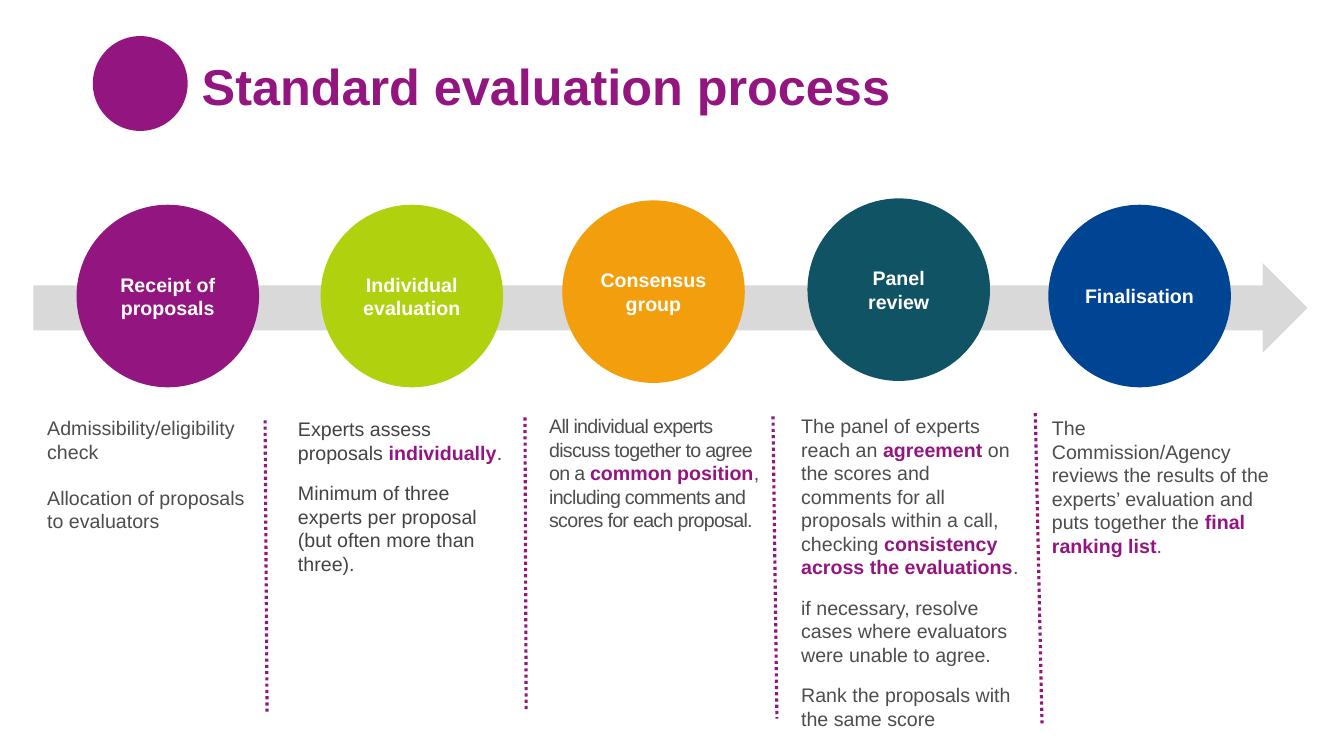
from dataclasses import dataclass

from lxml.etree import SubElement
from pptx import Presentation
from pptx.dml.color import RGBColor
from pptx.enum.dml import MSO_LINE
from pptx.enum.shapes import MSO_CONNECTOR, MSO_SHAPE
from pptx.enum.text import MSO_ANCHOR, PP_ALIGN
from pptx.oxml.ns import qn
from pptx.shapes.autoshape import Shape
from pptx.slide import Slide
from pptx.text.text import _Paragraph as Paragraph
from pptx.util import Cm, Pt

FONT = "Arial"
PURPLE = RGBColor(0x93, 0x16, 0x80)
LIME = RGBColor(0xB0, 0xD1, 0x0E)
ORANGE = RGBColor(0xF3, 0x9E, 0x0C)
TEAL = RGBColor(0x0F, 0x53, 0x64)
BLUE = RGBColor(0x00, 0x44, 0x94)
LIGHT_GREY = RGBColor(0xD9, 0xD9, 0xD9)
TEXT_GREY = RGBColor(0x4D, 0x4D, 0x4D)
DARK_GREY = RGBColor(0x44, 0x43, 0x42)
WHITE = RGBColor(0xFF, 0xFF, 0xFF)

CIRCLE_SIZE = 4.6
COLUMN_WIDTH = 6.0
COLUMN_HEIGHT = 6.4


@dataclass(frozen=True)
class Stage:
    """One step of the process; positions in cm, *asterisks* mark emphasis."""

    label: str
    color: RGBColor
    circle: tuple[float, float]
    column: tuple[float, float]
    paragraphs: tuple[str, ...]
    text_color: RGBColor = TEXT_GREY
    space_before: float = 6
    space_after: float = 6
    tracking: int = 0  # hundredths of a point, plain runs only


@dataclass(frozen=True)
class Divider:
    """A dotted line between two columns, in cm."""

    start: tuple[float, float]
    end: tuple[float, float]


STAGES = (
    Stage(
        "Receipt of proposals", PURPLE, (1.93, 5.16), (0.94, 10.36),
        ("Admissibility/eligibility check", "Allocation of proposals to evaluators"),
        space_before=16, space_after=0,
    ),
    Stage(
        "Individual evaluation", LIME, (8.08, 5.16), (7.26, 10.39),
        (
            "Experts assess proposals *individually*.",
            "Minimum of three experts per proposal (but often more than three).",
        ),
        text_color=DARK_GREY,
    ),
    Stage(
        "Consensus group", ORANGE, (14.17, 5.05), (13.59, 10.31),
        (
            "All individual experts discuss together to agree on a *common position*"
            ", including comments and scores for each proposal.",
        ),
        space_before=0, space_after=0, tracking=-50,
    ),
    Stage(
        "Panel review", TEAL, (20.35, 5.0), (19.94, 10.31),
        (
            "The panel of experts reach an *agreement* on the scores and comments for all "
            "proposals within a call, checking *consistency across the evaluations*.",
            "if necessary, resolve cases where evaluators were unable to agree.",
            "Rank the proposals with the same score",
        ),
    ),
    Stage(
        "Finalisation", BLUE, (26.42, 5.16), (26.26, 10.36),
        (
            "The Commission/Agency reviews the results of the experts’ evaluation and "
            "puts together the *final ranking list*.",
        ),
        space_before=18, space_after=12,
    ),
)

DIVIDERS = (
    Divider((6.68, 10.59), (6.73, 17.93)),
    Divider((13.23, 10.52), (13.26, 17.93)),
    Divider((19.48, 10.49), (19.58, 18.11)),
    Divider((26.09, 10.41), (26.26, 18.26)),
)


def set_font(paragraph: Paragraph, size: float, color: RGBColor | None = None, bold: bool = False) -> None:
    paragraph.font.name = FONT
    paragraph.font.size = Pt(size)
    paragraph.font.bold = bold
    if color is not None:
        paragraph.font.color.rgb = color


def add_filled_shape(
    slide: Slide, kind: MSO_SHAPE, left: float, top: float, width: float, height: float, color: RGBColor
) -> Shape:
    shape = slide.shapes.add_shape(kind, Cm(left), Cm(top), Cm(width), Cm(height))
    shape.shadow.inherit = False
    shape.fill.solid()
    shape.fill.fore_color.rgb = color
    shape.line.fill.background()
    return shape


def add_title(slide: Slide, text: str) -> None:
    title = slide.shapes.title
    title.left, title.top, title.width, title.height = Cm(4.83), Cm(1.35), Cm(26.72), Cm(1.57)
    frame = title.text_frame
    frame.text = text
    frame.vertical_anchor = MSO_ANCHOR.BOTTOM
    frame.margin_bottom = 0
    paragraph = frame.paragraphs[0]
    paragraph.alignment = PP_ALIGN.LEFT
    set_font(paragraph, 36, PURPLE, bold=True)


def add_circle(slide: Slide, stage: Stage) -> None:
    circle = add_filled_shape(slide, MSO_SHAPE.OVAL, *stage.circle, CIRCLE_SIZE, CIRCLE_SIZE, stage.color)
    frame = circle.text_frame
    frame.text = stage.label
    frame.word_wrap = True
    frame.vertical_anchor = MSO_ANCHOR.MIDDLE
    frame.margin_left = frame.margin_right = Cm(0.2)
    paragraph = frame.paragraphs[0]
    paragraph.alignment = PP_ALIGN.CENTER
    set_font(paragraph, 14, WHITE, bold=True)


def add_column(slide: Slide, stage: Stage) -> None:
    left, top = stage.column
    box = slide.shapes.add_textbox(Cm(left), Cm(top), Cm(COLUMN_WIDTH), Cm(COLUMN_HEIGHT))
    frame = box.text_frame
    frame.word_wrap = True
    for index, text in enumerate(stage.paragraphs):
        paragraph = frame.add_paragraph() if index else frame.paragraphs[0]
        paragraph.space_before = Pt(stage.space_before)
        paragraph.space_after = Pt(stage.space_after)
        set_font(paragraph, 14)
        for position, part in enumerate(text.split("*")):
            emphasised = position % 2 == 1
            run = paragraph.add_run()
            run.text = part
            run.font.bold = emphasised
            run.font.color.rgb = PURPLE if emphasised else stage.text_color
            if stage.tracking and not emphasised:
                run._r.get_or_add_rPr().set("spc", str(stage.tracking))


def add_divider(slide: Slide, divider: Divider) -> None:
    ends = [Cm(value) for value in divider.start + divider.end]
    connector = slide.shapes.add_connector(MSO_CONNECTOR.STRAIGHT, *ends)
    connector.line.color.rgb = PURPLE
    connector.line.width = Pt(2.25)
    connector.line.dash_style = MSO_LINE.ROUND_DOT
    SubElement(connector._element.spPr, qn("a:effectLst"))


def main() -> None:
    presentation = Presentation()
    presentation.slide_width = Cm(33.87)
    presentation.slide_height = Cm(19.05)
    slide = presentation.slides.add_slide(presentation.slide_layouts[5])

    # Heading
    add_title(slide, "Standard evaluation process")
    add_filled_shape(slide, MSO_SHAPE.OVAL, 2.34, 0.91, 2.39, 2.39, PURPLE)

    # Process arrow with its stages
    add_filled_shape(slide, MSO_SHAPE.RIGHT_ARROW, 0.84, 6.63, 32.11, 2.26, LIGHT_GREY)
    for stage in STAGES:
        add_circle(slide, stage)
        add_column(slide, stage)

    # Column dividers
    for divider in DIVIDERS:
        add_divider(slide, divider)

    presentation.save("out.pptx")


if __name__ == "__main__":
    main()
